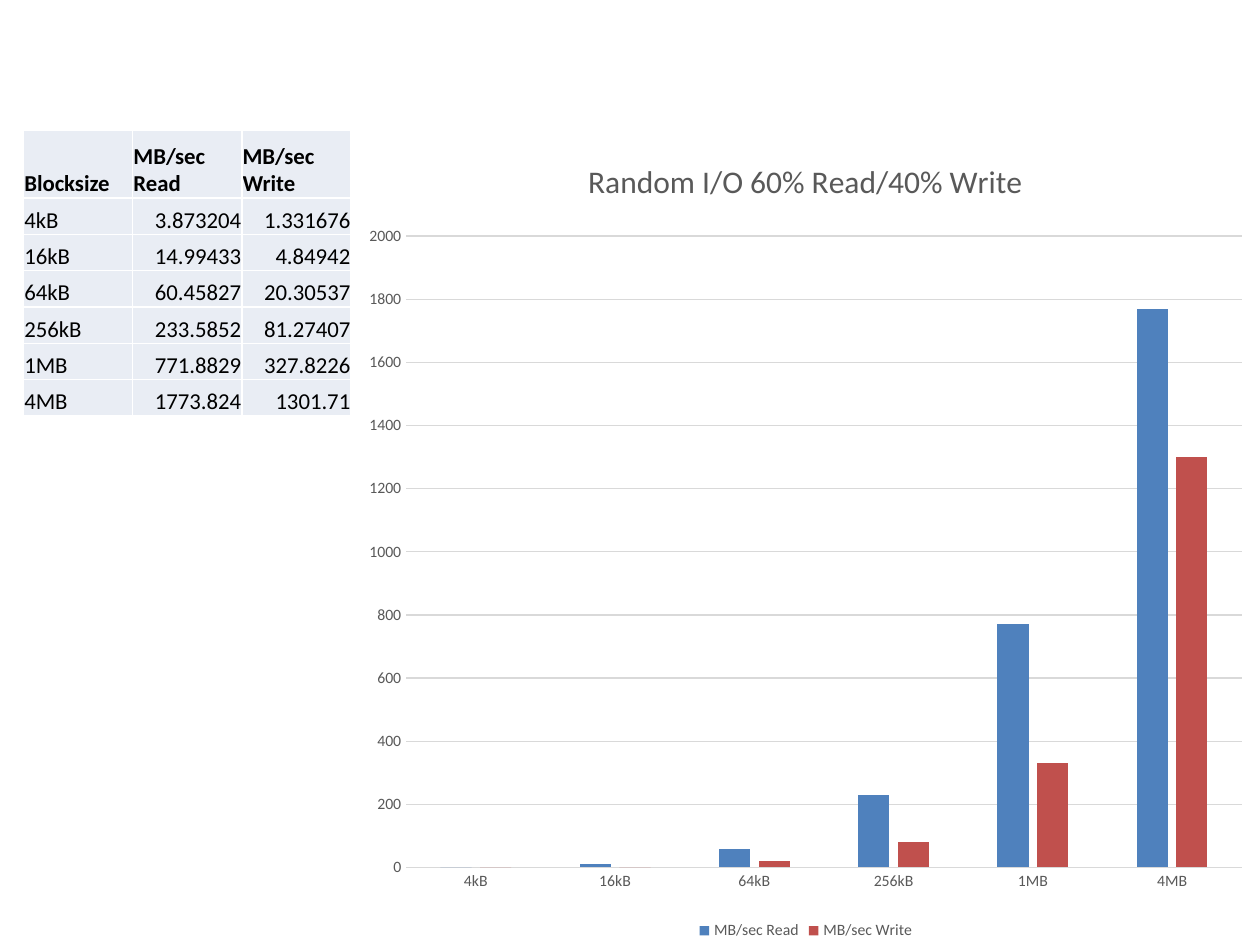
import lxml.etree
import pptx
import pptx.chart.data
import pptx.dml.color
import pptx.enum.chart
import pptx.enum.text
import pptx.oxml
import pptx.oxml.ns
import pptx.util

Pt = pptx.util.Pt
RGBColor = pptx.dml.color.RGBColor
qn = pptx.oxml.ns.qn

FONT = "Calibri"
BLACK = RGBColor(0x00, 0x00, 0x00)
GREY = RGBColor(0x59, 0x59, 0x59)
GRID_GREY = RGBColor(0xD9, 0xD9, 0xD9)
CELL_FILL = RGBColor(0xE9, 0xED, 0xF4)
WHITE = RGBColor(0xFF, 0xFF, 0xFF)
READ_BLUE = RGBColor(0x4F, 0x81, 0xBD)
WRITE_RED = RGBColor(0xC0, 0x50, 0x4D)

HEADERS = ["Blocksize", "MB/sec Read", "MB/sec Write"]
MEASUREMENTS = [
    ["4kB", "3.873204", "1.331676"],
    ["16kB", "14.99433", "4.84942"],
    ["64kB", "60.45827", "20.30537"],
    ["256kB", "233.5852", "81.27407"],
    ["1MB", "771.8829", "327.8226"],
    ["4MB", "1773.824", "1301.71"],
]
TOP = Pt(74.4)
COLUMN_WIDTH = Pt(62.4)
HEADER_HEIGHT = Pt(38.8)
ROW_HEIGHT = Pt(20.75)


def style_font(font, size, color, bold=False):
    font.name = FONT
    font.size = Pt(size)
    font.bold = bold
    font.color.rgb = color


def add_cell_borders(cell):
    properties = cell._tc.get_or_add_tcPr()
    for index, edge in enumerate(("lnL", "lnR", "lnT", "lnB")):
        line = lxml.etree.Element(qn(f"a:{edge}"), w=str(Pt(1)))
        fill = lxml.etree.SubElement(line, qn("a:solidFill"))
        lxml.etree.SubElement(fill, qn("a:srgbClr"), val=str(WHITE))
        properties.insert(index, line)


def fill_cell(cell, text, bold, alignment):
    cell.fill.solid()
    cell.fill.fore_color.rgb = CELL_FILL
    add_cell_borders(cell)
    cell.margin_left = cell.margin_right = cell.margin_top = Pt(0.5)
    cell.margin_bottom = Pt(0)
    cell.vertical_anchor = pptx.enum.text.MSO_ANCHOR.BOTTOM
    paragraph = cell.text_frame.paragraphs[0]
    paragraph.alignment = alignment
    run = paragraph.add_run()
    run.text = text
    style_font(run.font, 13, BLACK, bold)


def add_measurement_table(slide):
    rows = [HEADERS] + MEASUREMENTS
    table = slide.shapes.add_table(
        len(rows), len(HEADERS), Pt(13.4), TOP,
        COLUMN_WIDTH * len(HEADERS),
        HEADER_HEIGHT + ROW_HEIGHT * len(MEASUREMENTS)).table
    table.horz_banding = False
    for column in table.columns:
        column.width = COLUMN_WIDTH
    for row_index, texts in enumerate(rows):
        is_header = row_index == 0
        table.rows[row_index].height = HEADER_HEIGHT if is_header else ROW_HEIGHT
        for column_index, text in enumerate(texts):
            is_number = column_index > 0 and not is_header
            alignment = (pptx.enum.text.PP_ALIGN.RIGHT if is_number
                         else pptx.enum.text.PP_ALIGN.LEFT)
            fill_cell(table.cell(row_index, column_index), text, is_header, alignment)


def place_chart_part(element, index, **percentages):
    for old_layout in element.findall(qn("c:layout")):
        element.remove(old_layout)
    layout = lxml.etree.Element(qn("c:layout"))
    manual = lxml.etree.SubElement(layout, qn("c:manualLayout"))
    if "w" in percentages:
        lxml.etree.SubElement(manual, qn("c:layoutTarget"), val="inner")
    for axis in ("x", "y"):
        lxml.etree.SubElement(manual, qn(f"c:{axis}Mode"), val="edge")
    for name, percentage in percentages.items():
        lxml.etree.SubElement(manual, qn(f"c:{name}"), val=str(percentage / 100))
    element.insert(index, layout)


def style_line(line, color):
    line.color.rgb = color
    line.width = Pt(0.75)


def style_axes(chart):
    for axis in (chart.category_axis, chart.value_axis):
        axis.major_tick_mark = pptx.enum.chart.XL_TICK_MARK.NONE
        axis.minor_tick_mark = pptx.enum.chart.XL_TICK_MARK.NONE
        style_font(axis.tick_labels.font, 9, GREY)
    style_line(chart.category_axis.format.line, GRID_GREY)
    value_axis = chart.value_axis
    value_axis.minimum_scale = 0
    value_axis.maximum_scale = 2000
    value_axis.major_unit = 200
    value_axis.tick_labels.number_format = "General"
    value_axis.tick_labels.number_format_is_linked = False
    value_axis.format.line.fill.background()
    value_axis.has_major_gridlines = True
    style_line(value_axis.major_gridlines.format.line, GRID_GREY)


def add_chart_title(chart, text):
    chart.has_title = True
    run = chart.chart_title.text_frame.paragraphs[0].add_run()
    run.text = text
    style_font(run.font, 18, GREY)
    place_chart_part(chart.chart_title._element, 1, x=25.4, y=2.9)


def add_throughput_chart(slide):
    data = pptx.chart.data.CategoryChartData()
    data.categories = [row[0] for row in MEASUREMENTS]
    for column, name in enumerate(HEADERS[1:], start=1):
        data.add_series(name, [round(float(row[column]), -1) for row in MEASUREMENTS])
    chart = slide.shapes.add_chart(
        pptx.enum.chart.XL_CHART_TYPE.COLUMN_CLUSTERED,
        Pt(201), TOP, Pt(519), Pt(465.6), data).chart
    style_font(chart.font, 10, BLACK)
    add_chart_title(chart, "Random I/O 60% Read/40% Write")
    style_axes(chart)
    chart.has_legend = True
    chart.legend.position = pptx.enum.chart.XL_LEGEND_POSITION.BOTTOM
    chart.legend.include_in_layout = False
    style_font(chart.legend.font, 9, GREY)
    plot = chart.plots[0]
    plot.vary_by_categories = False
    plot.gap_width = 219
    plot.overlap = -27
    for series, color in zip(plot.series, (READ_BLUE, WRITE_RED)):
        series.format.fill.solid()
        series.format.fill.fore_color.rgb = color
    plot_area = chart._chartSpace.find(".//" + qn("c:plotArea"))
    place_chart_part(plot_area, 0, x=6, y=13, w=92, h=77.5)


def main():
    presentation = pptx.Presentation()
    presentation.slide_width = Pt(720)
    presentation.slide_height = Pt(540)
    slide = presentation.slides.add_slide(presentation.slide_layouts[6])
    add_measurement_table(slide)
    add_throughput_chart(slide)
    presentation.save("out.pptx")


if __name__ == "__main__":
    main()
